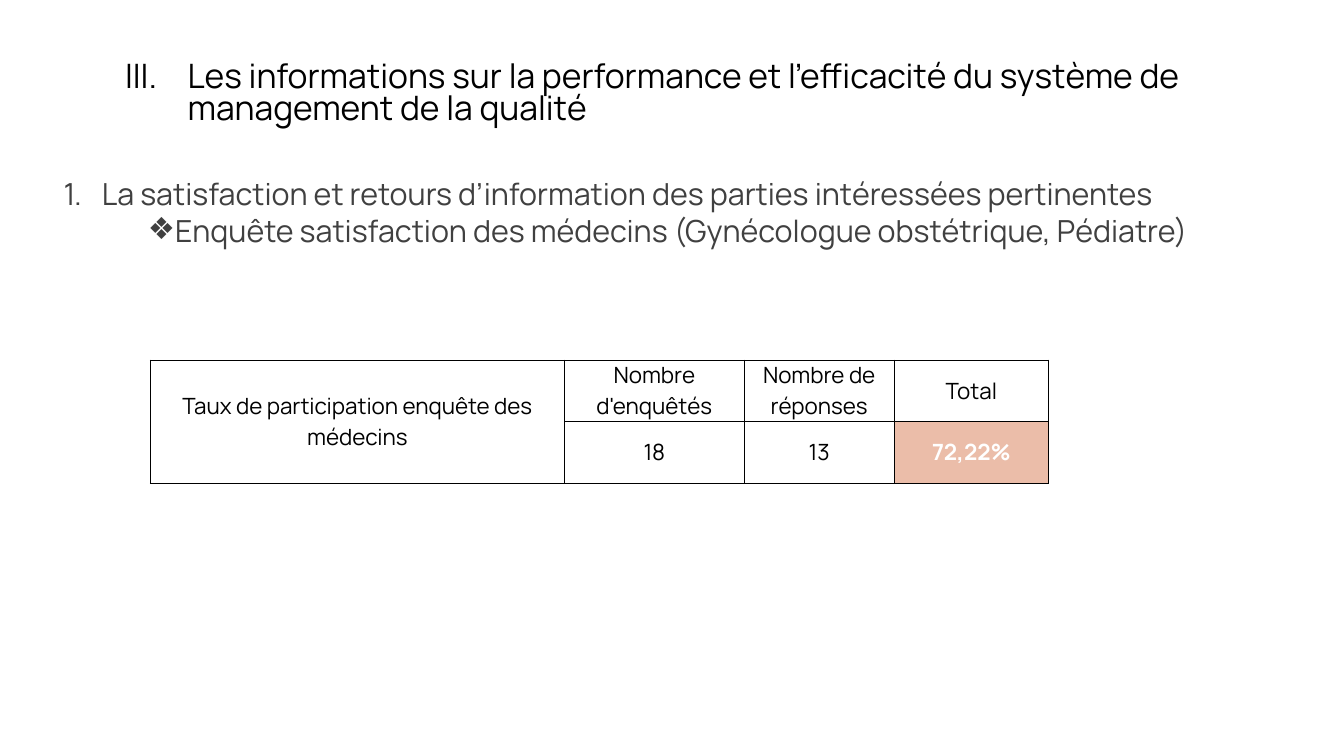
from dataclasses import dataclass

from lxml.etree import SubElement
from pptx import Presentation
from pptx.dml.color import RGBColor
from pptx.enum.text import MSO_ANCHOR as Anchor, MSO_AUTO_SIZE as AutoSize, PP_ALIGN as Align
from pptx.oxml.ns import qn
from pptx.util import Inches, Pt


@dataclass(frozen=True)
class Theme:
    """Font, colours and type sizes of the slide."""
    font: str = "Manrope"
    black: str = "000000"
    grey: str = "404040"
    white: str = "FFFFFF"
    accent: str = "EBBDA9"
    title: float = 24
    body: float = 21.7
    table: float = 16
    border: float = 0.5


THEME = Theme()


def add_run(p, text, size, color, bold=False):
    """Add one formatted run to a paragraph."""
    r = p.add_run()
    r.text = text
    r.font.name = THEME.font
    r.font.size = Pt(size)
    r.font.bold = bold
    r.font.color.rgb = RGBColor.from_string(color)


def place(sp, left, top, width, height, anchor):
    """Move a placeholder and fix its text frame."""
    sp.left, sp.top = Inches(left), Inches(top)
    sp.width, sp.height = Inches(width), Inches(height)
    tf = sp.text_frame
    tf.word_wrap = True
    tf.auto_size = AutoSize.NONE
    tf.vertical_anchor = anchor
    return tf


def format_item(p, indent, spacing, before, bullet, align=Align.LEFT, **attrs):
    """Set the spacing, hanging indent and bullet of a list paragraph."""
    p.alignment = align
    p.line_spacing = spacing
    p.space_before = Pt(before)
    pPr = p._p.get_or_add_pPr()
    pPr.set("marL", str(Inches(indent)))
    pPr.set("indent", str(-Inches(indent)))
    SubElement(pPr, qn(f"a:{bullet}"), **attrs)


def add_title(s):
    """Fill the numbered section title."""
    tf = place(s.shapes.title, 1.14, 0.21, 11.58, 1.47, Anchor.MIDDLE)
    p = tf.paragraphs[0]
    format_item(p, 0.62, 0.78, 0, "buAutoNum", type="romanUcPeriod", startAt="3")
    add_run(p, "Les informations sur la performance et l’efficacité du système de "
               "management de la qualité", THEME.title, THEME.black)


def add_body(s):
    """Fill the numbered heading and its centred sub-item."""
    tf = place(s.placeholders[1], 0.53, 1.79, 12.19, 1.31, Anchor.TOP)
    p = tf.paragraphs[0]
    format_item(p, 0.38, 0.7, 8, "buAutoNum", type="arabicPeriod")
    add_run(p, "La satisfaction et retours d’information des parties intéressées pertinentes",
            THEME.body, THEME.grey)
    p = tf.add_paragraph()
    format_item(p, 0.25, 0.7, 8, "buChar", Align.CENTER, char="❖")
    add_run(p, "Enquête satisfaction des médecins (Gynécologue obstétrique, Pédiatre)",
            THEME.body, THEME.grey)


def add_borders(cell):
    """Draw a thin line on the four sides of a cell."""
    tcPr = cell._tc.get_or_add_tcPr()
    for side in ("lnL", "lnR", "lnT", "lnB"):
        ln = SubElement(tcPr, qn(f"a:{side}"), w=str(Pt(THEME.border)))
        fill = SubElement(ln, qn("a:solidFill"))
        SubElement(fill, qn("a:srgbClr"), val=THEME.black)


def fill_cell(cell, text, anchor, highlight):
    """Format one table cell and write its text."""
    add_borders(cell)
    cell.margin_left = cell.margin_right = cell.margin_top = cell.margin_bottom = 0
    cell.vertical_anchor = anchor
    if highlight:
        cell.fill.solid()
        cell.fill.fore_color.rgb = RGBColor.from_string(THEME.accent)
    else:
        cell.fill.background()
    if text:
        p = cell.text_frame.paragraphs[0]
        p.alignment = Align.CENTER
        add_run(p, text, THEME.table, THEME.white if highlight else THEME.black, highlight)


def add_participation_table(s):
    """Add the participation rate table."""
    rows = [
        ["Taux de participation enquête des médecins", "Nombre d'enquêtés",
         "Nombre de réponses", "Total"],
        ["", "18", "13", "72,22%"],
    ]
    widths, heights = [4.11, 1.78, 1.49, 1.53], [0.6, 0.62]
    table = s.shapes.add_table(len(rows), len(widths), Inches(1.49), Inches(3.57),
                               Inches(sum(widths)), Inches(sum(heights))).table
    table.first_row = table.horz_banding = False
    for col, width in zip(table.columns, widths):
        col.width = Inches(width)
    for row, height in zip(table.rows, heights):
        row.height = Inches(height)
    for i, texts in enumerate(rows):
        for j, text in enumerate(texts):
            anchor = Anchor.BOTTOM if text.startswith("Nombre") else Anchor.MIDDLE
            fill_cell(table.cell(i, j), text, anchor, text.endswith("%"))
    table.cell(0, 0).merge(table.cell(1, 0))


def main():
    """Build and save the slide."""
    prs = Presentation()
    prs.slide_width, prs.slide_height = Inches(13.33), Inches(7.5)
    s = prs.slides.add_slide(prs.slide_layouts[1])
    add_title(s)
    add_body(s)
    add_participation_table(s)
    prs.save("out.pptx")


if __name__ == "__main__":
    main()
